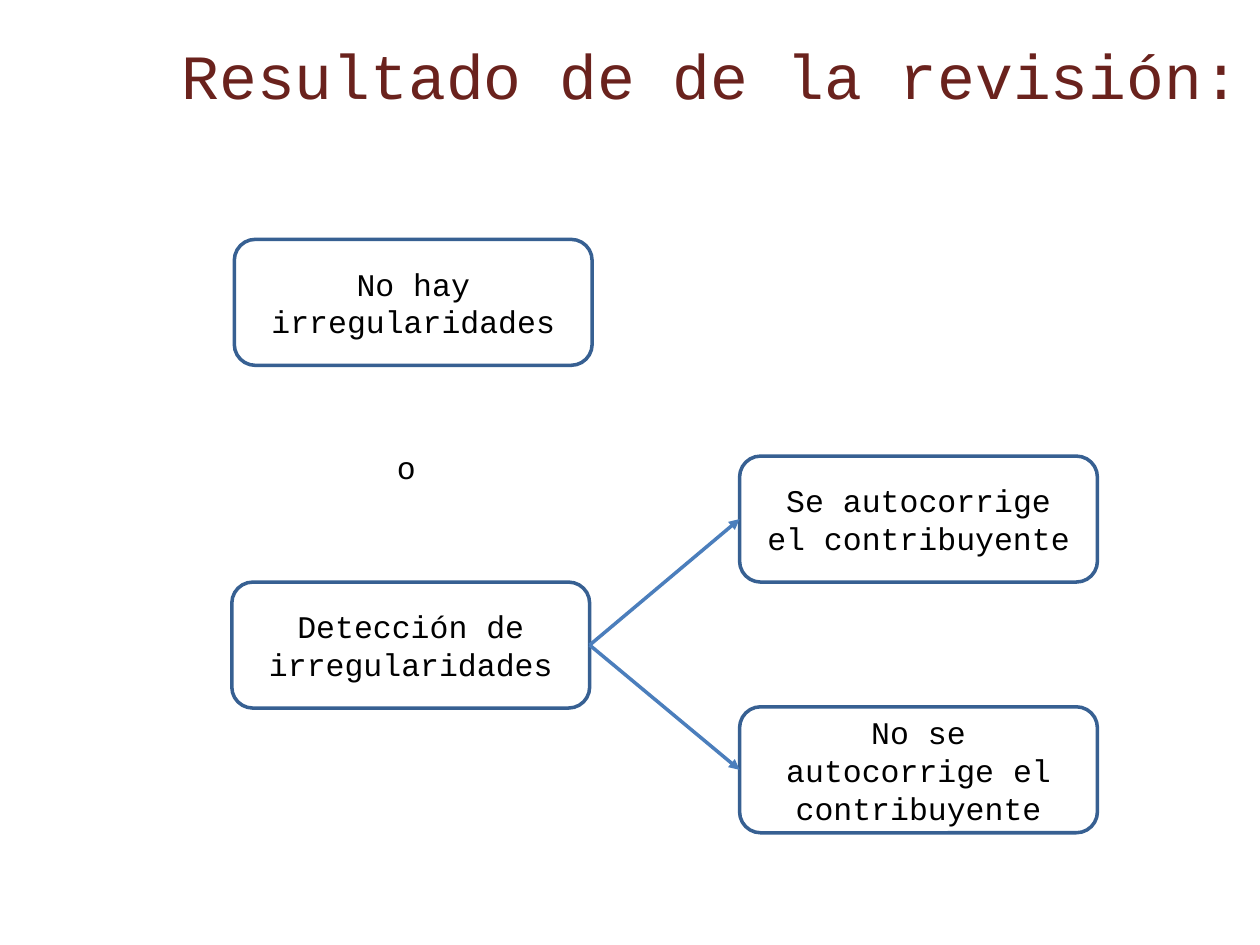
"""Build the slide on the possible results of a review."""
from lxml.etree import SubElement
from pptx import Presentation
from pptx.dml.color import RGBColor
from pptx.enum.shapes import MSO_CONNECTOR, MSO_SHAPE
from pptx.enum.text import MSO_ANCHOR, PP_ALIGN
from pptx.oxml.ns import qn
from pptx.util import Inches, Pt

COLORS = {"title": "6A221D", "text": "000000", "fill": "FFFFFF",
          "edge": "376092", "arrow": "4B7EBC"}
BODY = {"name": "Courier New", "size": Pt(18)}
HEAD = {**BODY, "size": Pt(36)}


def write(shape, text, font, color, align=PP_ALIGN.CENTER, wrap=True):
    frame = shape.text_frame
    frame.word_wrap = wrap
    frame.vertical_anchor = MSO_ANCHOR.MIDDLE
    line = frame.paragraphs[0]
    line.alignment = align
    run = line.add_run()
    run.text = text
    for key, value in font.items():
        setattr(run.font, key, value)
    run.font.color.rgb = RGBColor.from_string(COLORS[color])


def stroke(line, color):
    line.color.rgb = RGBColor.from_string(COLORS[color])
    line.width = Pt(2)


deck = Presentation()
deck.slide_width, deck.slide_height = Inches(10), Inches(7.5)
slide = deck.slides.add_slide(deck.slide_layouts[6])
shapes = slide.shapes

title = shapes.add_textbox(Inches(1.18), Inches(0), Inches(8.76), Inches(1.18))
write(title, "Resultado de de la revisión:", HEAD, "title", PP_ALIGN.RIGHT)

nodes = {
    "found": (1.84, 4.62, "Detección de irregularidades"),
    "fixed": (5.87, 3.62, "Se autocorrige el contribuyente"),
    "unfixed": (5.87, 5.61, "No se autocorrige el contribuyente"),
    "clean": (1.86, 1.9, "No hay irregularidades"),
}
boxes = {}
for name, (left, top, text) in nodes.items():
    box = shapes.add_shape(MSO_SHAPE.FLOWCHART_ALTERNATE_PROCESS,
                           Inches(left), Inches(top), Inches(2.84), Inches(1))
    box.shadow.inherit = False
    box.fill.solid()
    box.fill.fore_color.rgb = RGBColor.from_string(COLORS["fill"])
    stroke(box.line, "edge")
    write(box, text, BODY, "text")
    boxes[name] = box

for goal in ("fixed", "unfixed"):
    arrow = shapes.add_connector(MSO_CONNECTOR.STRAIGHT, 0, 0, 0, 0)
    arrow.begin_connect(boxes["found"], 3)
    arrow.end_connect(boxes[goal], 1)
    stroke(arrow.line, "arrow")
    SubElement(arrow.line._get_or_add_ln(), qn("a:tailEnd"), type="triangle")
    SubElement(arrow._element.spPr, qn("a:effectLst"))

choice = shapes.add_textbox(Inches(3.03), Inches(3.51), Inches(0.39), Inches(0.4))
write(choice, "o", BODY, "text", wrap=False)

deck.save("out.pptx")
